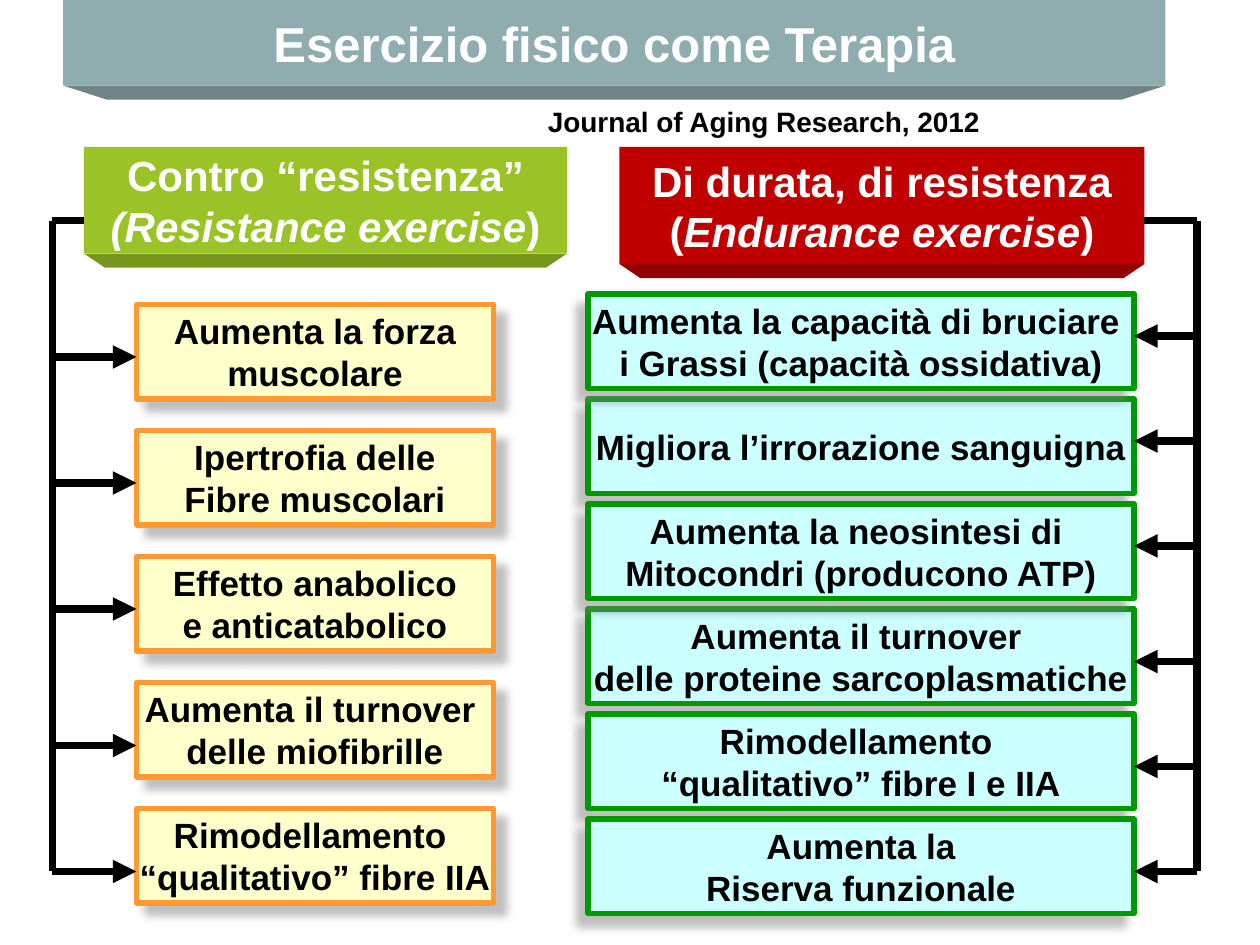
from dataclasses import dataclass

from lxml import etree
from pptx import Presentation
from pptx import util as u
from pptx.dml.color import RGBColor
from pptx.enum import shapes, text
from pptx.oxml.ns import qn

COLS, ROWS = 120, 90
CELL = u.Inches(10) // COLS


@dataclass(frozen=True)
class Theme:
    font: str = "Arial"
    white: str = "FFFFFF"
    black: str = "000000"
    title: tuple = ("8FACAE", "6E8486")
    green: tuple = ("9AC327", "76961E")
    red: tuple = ("C00000", "930000")
    strength: tuple = ("FFFFCC", "FF9933")
    endurance: tuple = ("CCFFFF", "009900")
    shadow: str = "808080"
    title_size: int = 28
    head_size: int = 24
    box_size: int = 20
    source_size: int = 16
    border: float = 3
    stroke: float = 4.5


T = Theme()

STRENGTH = [
    ("Aumenta la forza", "muscolare"),
    ("Ipertrofia delle", "Fibre muscolari"),
    ("Effetto anabolico", "e anticatabolico"),
    ("Aumenta il turnover ", "delle miofibrille"),
    ("Rimodellamento ", "“qualitativo” fibre IIA"),
]
ENDURANCE = [
    ("Aumenta la capacità di bruciare ", "i Grassi (capacità ossidativa)"),
    ("Migliora l’irrorazione sanguigna",),
    ("Aumenta la neosintesi di ", "Mitocondri (producono ATP)"),
    ("Aumenta il turnover ", "delle proteine sarcoplasmatiche"),
    ("Rimodellamento ", "“qualitativo” fibre I e IIA"),
    ("Aumenta la", "Riserva funzionale"),
]


def grid(*cells):
    return [round(c * CELL) for c in cells]


def rgb(color):
    return RGBColor.from_string(color)


def write(sp, lines, size, color, align=text.PP_ALIGN.CENTER):
    tf = sp.text_frame
    tf.word_wrap = False
    tf.vertical_anchor = text.MSO_ANCHOR.MIDDLE
    for i, line in enumerate(lines):
        p = tf.paragraphs[0] if i == 0 else tf.add_paragraph()
        p.alignment = align
        for words, italic in line:
            r = p.add_run()
            r.text = words
            r.font.name, r.font.size = T.font, u.Pt(size)
            r.font.bold, r.font.italic = True, italic
            r.font.color.rgb = rgb(color)


def paint(sp, fill):
    sp.shadow.inherit = False
    sp.fill.solid()
    sp.fill.fore_color.rgb = rgb(fill)
    sp.line.fill.background()


def add_banner(s, x, y, w, h, colors, lines, size, inset):
    face, edge = colors
    base, depth = y + h + 0.15, 1.35
    fb = s.shapes.build_freeform(*grid(x, base), scale=1.0)
    fb.add_line_segments([grid(x + w, base), grid(x + w - inset, base + depth),
                          grid(x + inset, base + depth)])
    paint(fb.convert_to_shape(), edge)
    sp = s.shapes.add_shape(shapes.MSO_SHAPE.RECTANGLE, *grid(x, y, w, h + 0.15))
    paint(sp, face)
    write(sp, lines, size, T.white)


def add_shadow(sp, angle):
    lst = sp._element.spPr.find(qn("a:effectLst"))
    shd = etree.SubElement(lst, qn("a:outerShdw"), blurRad=str(u.Pt(5)),
                           dist=str(u.Pt(8.5)), dir=str(angle * 60000),
                           algn="ctr", rotWithShape="0")
    clr = etree.SubElement(shd, qn("a:srgbClr"), val=T.shadow)
    etree.SubElement(clr, qn("a:alpha"), val="50000")


def add_box(s, x, y, w, lines, colors, angle):
    fill, border = colors
    sp = s.shapes.add_shape(shapes.MSO_SHAPE.RECTANGLE, *grid(x, y, w, 9))
    paint(sp, fill)
    sp.line.color.rgb = rgb(border)
    sp.line.width = u.Pt(T.border)
    add_shadow(sp, angle)
    write(sp, [[(line, False)] for line in lines], T.box_size, T.black)


def add_line(s, x1, y1, x2, y2, arrow=False):
    c = s.shapes.add_connector(shapes.MSO_CONNECTOR.STRAIGHT, *grid(x1, y1, x2, y2))
    c.line.color.rgb = rgb(T.black)
    c.line.width = u.Pt(T.stroke)
    if arrow:
        etree.SubElement(c.line._get_or_add_ln(), qn("a:tailEnd"), type="triangle")
    etree.SubElement(c._element.spPr, qn("a:effectLst"))


def add_bracket(s, trunk, head, box, rows):
    top = 21
    add_line(s, trunk, top, head, top)
    add_line(s, trunk, top, trunk, rows[-1])
    for row in rows:
        add_line(s, trunk, row, box, row, arrow=True)


def add_source(s, x, y, w, h, words):
    sp = s.shapes.add_textbox(*grid(x, y, w, h))
    write(sp, [[(words, False)]], T.source_size, T.black, text.PP_ALIGN.LEFT)


def main():
    prs = Presentation()
    prs.slide_width, prs.slide_height = grid(COLS, ROWS)
    s = prs.slides.add_slide(prs.slide_layouts[6])

    add_banner(s, 6, 0, 105, 8, T.title,
               [[("Esercizio fisico come Terapia", False)]], T.title_size, 4.2)
    add_banner(s, 8, 14, 46, 10, T.green,
               [[("Contro “resistenza”", False)],
                [("(Resistance exercise", True), (")", False)]], T.head_size, 2)
    add_banner(s, 59, 14, 50, 11, T.red,
               [[("Di durata, di resistenza", False)],
                [("(", False), ("Endurance exercise", True), (")", False)]],
               T.head_size, 2)

    for i, lines in enumerate(STRENGTH):
        add_box(s, 13, 29 + 12 * i, 34, lines, T.strength, 45)
    for i in (3, 1, 0, 2, 4, 5):
        add_box(s, 56, 28 + 10 * i, 52, ENDURANCE[i], T.endurance, 135)

    add_bracket(s, 5, 8, 13, (34, 46, 58, 71, 83))
    add_bracket(s, 114, 109, 108, (32, 42, 52, 63, 73, 83))
    add_source(s, 51, 9.4, 43.8, 4.4, "Journal of Aging Research, 2012")

    prs.save("out.pptx")


if __name__ == "__main__":
    main()
